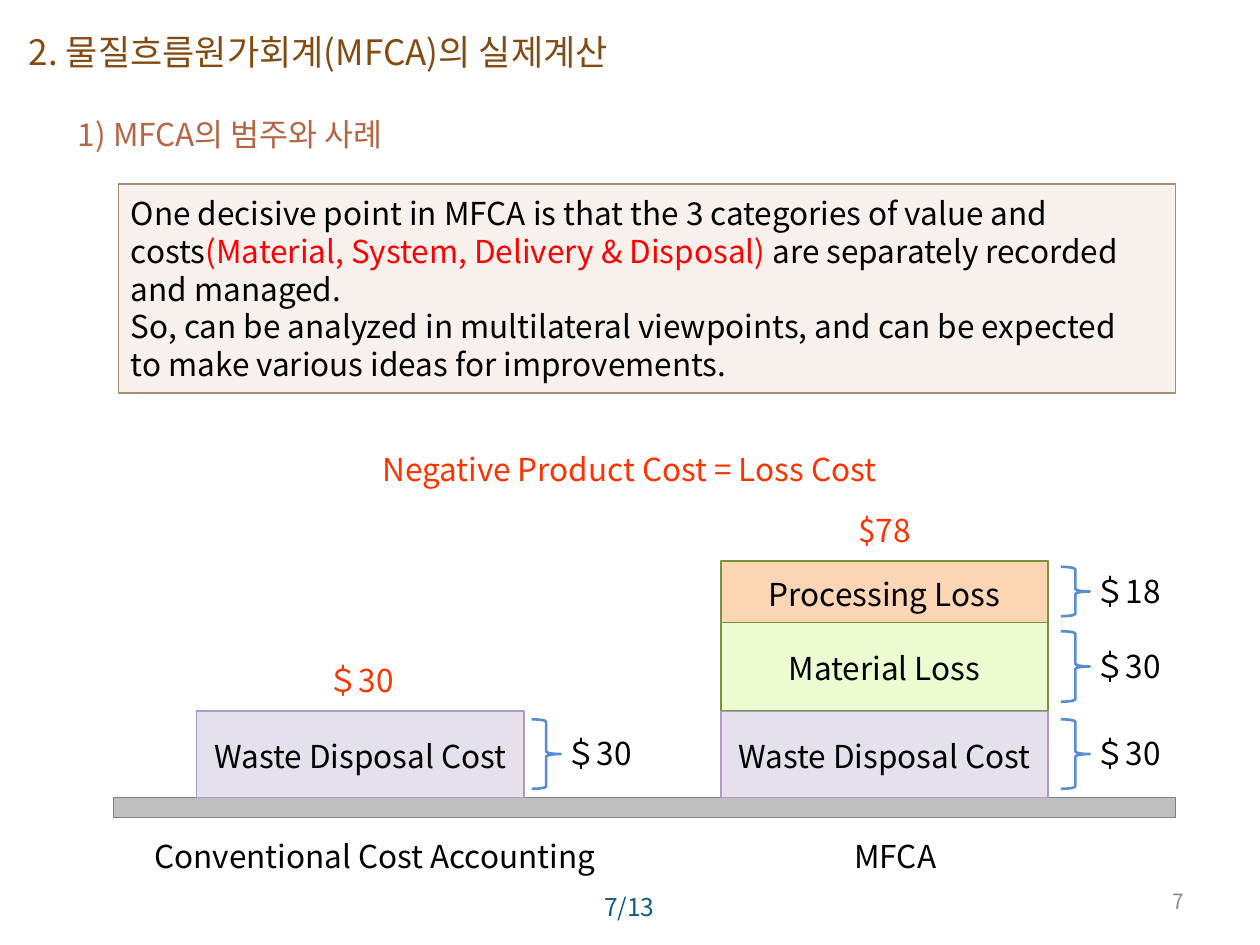
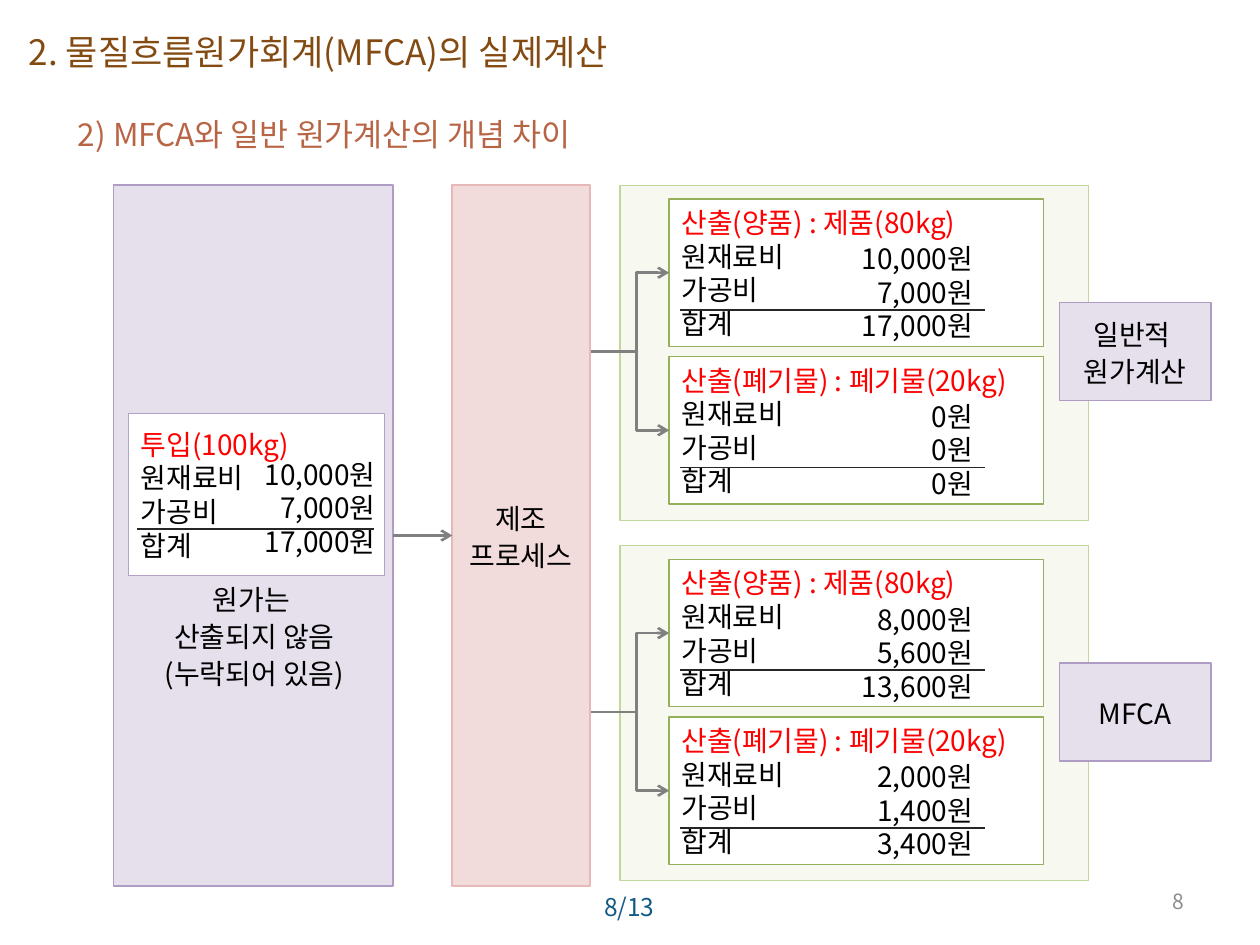
from copy import deepcopy
from dataclasses import dataclass
from lxml.etree import SubElement
from pptx import Presentation
from pptx.dml.color import RGBColor
from pptx.enum.shapes import MSO_CONNECTOR, MSO_SHAPE
from pptx.enum.text import MSO_ANCHOR, PP_ALIGN
from pptx.oxml.ns import qn
from pptx.util import Inches, Pt

# Content
TITLE = "2. 물질흐름원가회계(MFCA)의 실제계산"
PAGES = 13
HEADS = {7: "1) MFCA의 범주와 사례", 8: "2) MFCA와 일반 원가계산의 개념 차이"}

POINT = [
    [("One decisive point in MFCA is that the 3 categories of value and \ncosts", "ink"),
     ("(Material, System, Delivery & Disposal) ", "red"),
     ("are separately recorded \nand managed.", "ink")],
    "So, can be analyzed in multilateral viewpoints, and can be expected \n"
    "to make various ideas for improvements.",
]
CLAIM = "Negative Product Cost = Loss Cost"
WASTE = ("Waste Disposal Cost", "＄30", 0.69, "lilac", "violet")
# left edge, caption, caption middle, total, brace gap, blocks from the bottom up
STACKS = [
    (1.56, "Conventional Cost Accounting", 2.97, "＄30", 0.06, [WASTE]),
    (5.72, "MFCA", 7.1, "$78", 0.1, [
        WASTE,
        ("Material Loss", "＄30", 0.7, "lime", "olive"),
        ("Processing Loss", "＄18", 0.49, "peach", "olive")]),
]

ROWS = ["원재료비", "가공비", "합계"]
INPUT = ("투입(100kg)", ["10,000원", "7,000원", "17,000원"])
LOST = "원가는 \n산출되지 않음\n(누락되어 있음)"
PROCESS = "제조\n프로세스"
GOOD, SCRAP = "산출(양품) : 제품(80kg)", "산출(폐기물) : 폐기물(20kg)"
GROUPS = [
    ("일반적 \n원가계산", [(GOOD, ["10,000원", "7,000원", "17,000원"]),
                     (SCRAP, ["0원", "0원", "0원"])]),
    ("MFCA", [(GOOD, ["8,000원", "5,600원", "13,600원"]),
              (SCRAP, ["2,000원", "1,400원", "3,400원"])]),
]


# Theme: lengths are in cells of a 10 by 7.5 grid
@dataclass(frozen=True)
class Theme:
    font = "Noto Sans CJK KR"
    wide, high, cell = 10, 7.5, Inches(1)
    title, body, small, foot, num = 20, 18, 16, 14, 12
    hues = dict(
        ink="000000", red="FF0000", loss="FF3300", white="FFFFFF",
        title="834A12", head="B86545", foot="125A83", num="8C8C8C",
        cream="F7F0ED", tan="A49073", floor="BFBFBF", gray="808080",
        lilac="E6E0EC", violet="AE9CC4", mauve="B3A2C7", lime="ECFCD0",
        olive="77933C", peach="FCD5B5", brace="558ED5", pale="F7F9F1",
        leaf="C3D69B", moss="96AF5A", pink="F2DCDB", rose="E6B9B8", rule="262626")


T = Theme()
LEFT, MID, RIGHT = PP_ALIGN.LEFT, PP_ALIGN.CENTER, PP_ALIGN.RIGHT


def hue(name):
    return RGBColor.from_string(T.hues[name])


def cells(*spans):
    return [round(n * T.cell) for n in spans]


# Text
def write(shape, text, size=T.body, color="ink", align=LEFT, gap=None,
          mid=True, wrap=False):
    frame = shape.text_frame
    frame.word_wrap = wrap
    frame.vertical_anchor = MSO_ANCHOR.MIDDLE if mid else MSO_ANCHOR.TOP
    for i, item in enumerate(text if isinstance(text, list) else [text]):
        para = frame.add_paragraph() if i else frame.paragraphs[0]
        para.alignment = align
        if gap:
            para.line_spacing = gap
        for words, tint in [(item, color)] if isinstance(item, str) else item:
            for n, line in enumerate(words.split("\n")):
                if n:
                    para.add_line_break()
                run = para.add_run()
                run.text = line
                font = run.font
                font.name, font.size = T.font, Pt(size)
                font.color.rgb = hue(tint)
                props = run._r.get_or_add_rPr()
                SubElement(props, qn("a:ea")).set("typeface", T.font)
                if n:
                    run._r.getprevious().append(deepcopy(props))
    return shape


def label(slide, spot, text, **form):
    return write(slide.shapes.add_textbox(*cells(*spot)), text,
                 **{"mid": False, **form})


# Shapes and lines
def draw(slide, spot, fill, edge, width=0.75, kind=MSO_SHAPE.RECTANGLE):
    shape = slide.shapes.add_shape(kind, *cells(*spot))
    shape.shadow.inherit = False
    if fill:
        shape.fill.solid()
        shape.fill.fore_color.rgb = hue(fill)
    else:
        shape.fill.background()
    shape.line.color.rgb = hue(edge)
    shape.line.width = Pt(width)
    return shape


def link(slide, start, end, color="gray", width=1.5, bend=None, arrow=True):
    kind = MSO_CONNECTOR.ELBOW if bend else MSO_CONNECTOR.STRAIGHT
    line = slide.shapes.add_connector(kind, *cells(*start, *end))
    line.line.color.rgb = hue(color)
    line.line.width = Pt(width)
    props = line._element.spPr
    if arrow:
        SubElement(line.line._get_or_add_ln(), qn("a:tailEnd")).set("type", "arrow")
    if bend:
        guide = SubElement(props.find(qn("a:prstGeom")).get_or_add_avLst(), qn("a:gd"))
        guide.set("name", "adj1")
        guide.set("fmla", f"val {round(bend * 100000)}")
    SubElement(props, qn("a:effectLst"))
    return line


# Shared title, heading and footers
def start(deck, page):
    slide = deck.slides.add_slide(deck.slide_layouts[6])
    label(slide, (4.45, 7.03, 1.09, 0.29), f"{page}/{PAGES}", size=T.foot,
          color="foot", align=MID, wrap=True)
    label(slide, (0.13, 0.19, 9.65, 0.44), TITLE, size=T.title, color="title",
          mid=True, wrap=True)
    label(slide, (0.52, 0.86, 9.1, 0.41), HEADS[page], color="head",
          mid=True, wrap=True)
    label(slide, (7.17, 6.95, 2.33, 0.4), str(page), size=T.num, color="num",
          align=RIGHT, mid=True, wrap=True)
    return slide


# Cost stacks
def stacks(slide):
    base, wide, tall = 6.33, 2.6, 0.39
    write(draw(slide, (0.94, 1.46, 8.39, 1.66), "cream", "tan"), POINT)
    draw(slide, (0.9, base, 8.43, 0.16), "floor", "gray")
    label(slide, (2.73, 3.52, 4.53, tall), CLAIM, color="loss", align=MID)
    for left, name, mid, total, gap, blocks in STACKS:
        label(slide, (mid - 1.87, base + 0.23, 3.75, tall), name, align=MID, gap=1.1)
        top, edge = base, left + wide + gap
        for text, price, high, fill, line in blocks:
            top -= high
            write(draw(slide, (left, top, wide, high), fill, line, 1), text,
                  align=MID, gap=1.1)
            draw(slide, (edge, top + high * 0.1, 0.23, high * 0.8), None, "brace",
                 1.5, MSO_SHAPE.RIGHT_BRACE)
            label(slide, (edge + 0.06, top + (high - tall) / 2 - 0.01, 0.94, tall),
                  price, align=MID)
        label(slide, (left + wide / 2 - 0.47, top - 0.44, 0.94, tall), total,
              color="loss", align=MID)


# Cost card: heading, row names, amounts and a rule above the total
def card(slide, spot, data, edge, amounts, rule):
    head, sums = data
    box = write(draw(slide, spot, "white", edge), [[(head, "red")], *ROWS], size=T.small)
    right, top = amounts
    wide = 1.4
    label(slide, (right - wide, top, wide, 1), sums, size=T.small, align=RIGHT)
    begin, end, y = rule
    link(slide, (begin, y), (end, y), "rule", 1, arrow=False)
    return box


# Cost flow
def flow(slide):
    top, high = 1.47, 5.56
    feed = draw(slide, (0.9, top, 2.22, high), "lilac", "violet", 1)
    card(slide, (1.02, 3.28, 2.03, 1.29), INPUT, "mauve", (3.08, 3.58), (1.09, 2.97, 4.2))
    label(slide, (0.92, 4.55, 2.2, 0.39), LOST, size=T.small, align=MID, gap=1.1)
    work = write(draw(slide, (3.59, top, 1.09, high), "pink", "rose", 1), PROCESS,
                 size=T.small, align=MID, gap=1.1)
    arrow = link(slide, (3.12, 4.25), (3.59, 4.25))
    arrow.begin_connect(feed, 3)
    arrow.end_connect(work, 1)
    for i, (name, outs) in enumerate(GROUPS):
        y = top + i * 2.86
        draw(slide, (4.92, y, 3.72, 2.66), "pale", "leaf")
        write(draw(slide, (8.41, y + 0.93, 1.2, 0.78), "lilac", "violet", 1), name,
              size=T.small, align=MID, gap=1.1)
        for j, data in enumerate(outs):
            row = y + 0.11 + j * 1.25
            box = card(slide, (5.31, row, 2.97, 1.17), data, "moss",
                       (7.82, row + 0.29), (5.4, 7.82, row + 0.88))
            link(slide, (4.69, y + 1.32), (5.31, row + 0.58),
                 bend=0.58).end_connect(box, 1)


def main():
    deck = Presentation()
    deck.slide_width, deck.slide_height = cells(T.wide, T.high)
    for page, fill in ((7, stacks), (8, flow)):
        fill(start(deck, page))
    deck.save("out.pptx")


if __name__ == "__main__":
    main()
